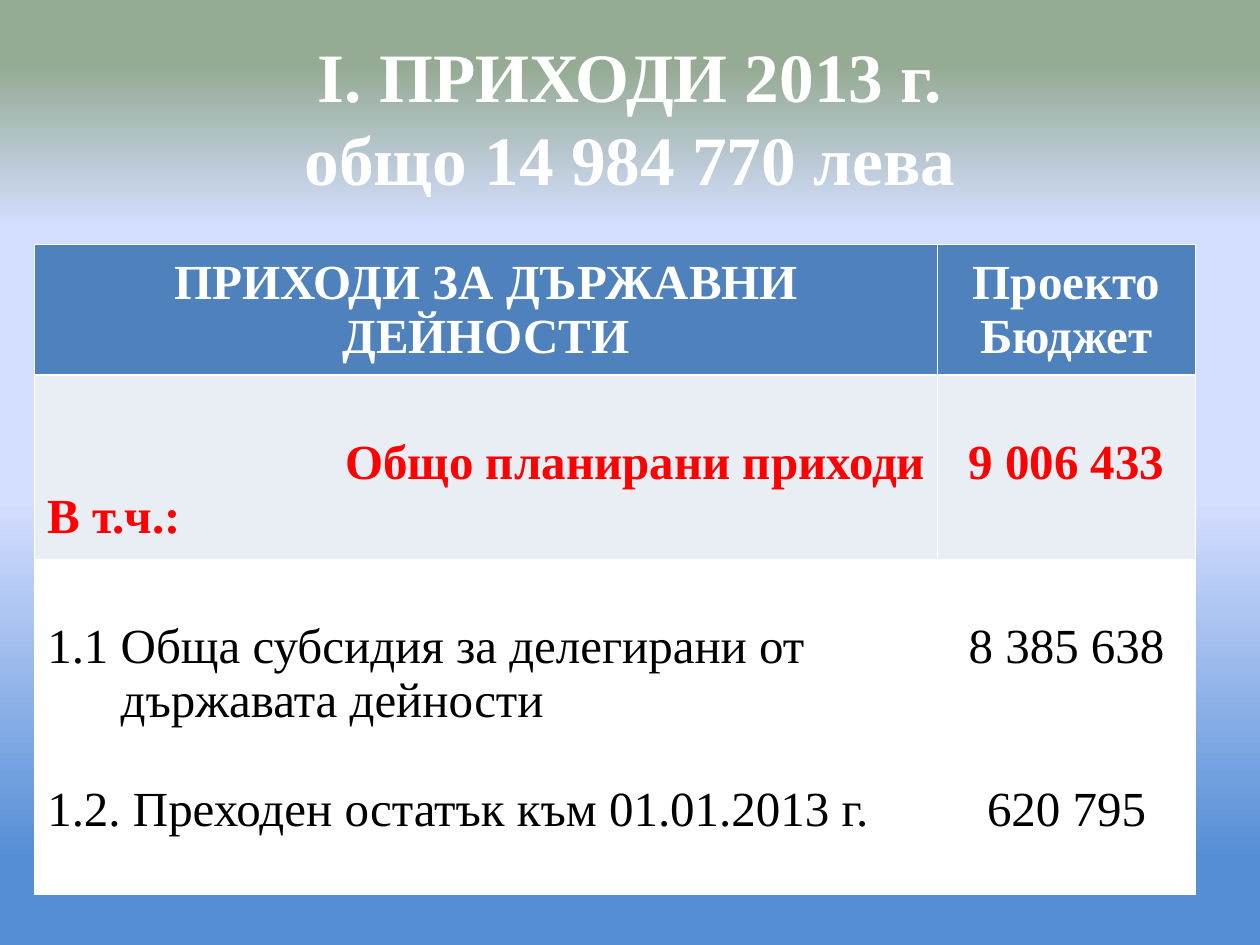
from dataclasses import dataclass
from typing import Optional

from lxml import etree
from pptx import Presentation
from pptx import util as u
from pptx.dml.color import RGBColor
from pptx.enum import text as t
from pptx.oxml.ns import qn

HUES = {"white": "FFFFFF", "blue": "4F81BD", "pale": "E9EDF4",
        "red": "FF0000", "black": "000000"}
STOPS = [(9, "558ED5"), (47, "D4DEFF"), (76, "D4DEFF"), (93, "96AB94")]
FACE = "Times New Roman"
LEFT, MID, RIGHT = t.PP_ALIGN.LEFT, t.PP_ALIGN.CENTER, t.PP_ALIGN.RIGHT
LINE = 31  # height of one table line in points
PAD = 3.6  # cell margin above and below in points


@dataclass
class Para:
    words: str
    align: t.PP_ALIGN = MID
    gap: int = 0  # free lines above
    indent: Optional[u.Length] = None


@dataclass
class Row:
    height: float
    fill: str
    ink: str
    bold: bool
    lead: int  # free lines at the top of each cell
    anchor: t.MSO_ANCHOR
    cells: list[list[Para]]


TOP, CENTRE = t.MSO_ANCHOR.TOP, t.MSO_ANCHOR.MIDDLE
COLS = [18.2, 5.2]
ROWS = [
    Row(2.42, "blue", "white", True, 0, CENTRE, [
        [Para("ПРИХОДИ ЗА ДЪРЖАВНИ ДЕЙНОСТИ")],
        [Para("Проекто"), Para("Бюджет")]]),
    Row(3.53, "pale", "red", True, 1, TOP, [
        [Para("Общо планирани приходи", RIGHT), Para("В т.ч.:", LEFT)],
        [Para("9 006 433")]]),
    Row(6.75, "white", "black", False, 1, TOP, [
        [Para("1.1 Обща субсидия за делегирани от", LEFT),
         Para("държавата дейности", LEFT, indent=u.Cm(1.48)),
         Para("1.2. Преходен остатък към 01.01.2013 г.", LEFT, gap=1)],
        [Para("8 385 638"), Para("620 795", gap=2)]]),
]


def style(font, size: float, ink: str, bold: bool) -> None:
    for key, val in {"name": FACE, "size": u.Pt(size), "bold": bold}.items():
        setattr(font, key, val)
    font.color.rgb = RGBColor.from_string(HUES[ink])


def paint(slide) -> None:
    """Fill the background with the gradient, running from bottom to top."""
    fill = slide.background.fill
    fill.gradient()
    fill.gradient_angle = 90
    stops = slide.background._cSld.find(".//" + qn("a:gsLst"))
    for old in list(stops):
        stops.remove(old)
    for pos, hue in STOPS:
        stop = etree.SubElement(stops, qn("a:gs"), pos=str(pos * 1000))
        etree.SubElement(stop, qn("a:srgbClr"), val=hue)


def edge(cell) -> None:
    """Put a thin white border on all four sides, ahead of the cell fill."""
    props = cell._tc.get_or_add_tcPr()
    for i, side in enumerate(("lnL", "lnR", "lnT", "lnB")):
        line = etree.Element(qn("a:" + side), w=str(u.Pt(1)))
        solid = etree.SubElement(line, qn("a:solidFill"))
        etree.SubElement(solid, qn("a:srgbClr"), val=HUES["white"])
        props.insert(i, line)


def write(cell, row: Row, paras: list[Para]) -> None:
    form = {"vertical_anchor": row.anchor, "margin_bottom": u.Pt(PAD),
            "margin_top": u.Pt(PAD + row.lead * LINE)}
    for key, val in form.items():
        setattr(cell, key, val)
    cell.fill.solid()
    cell.fill.fore_color.rgb = RGBColor.from_string(HUES[row.fill])
    edge(cell)
    frame = cell.text_frame
    for i, para in enumerate(paras):
        p = frame.add_paragraph() if i else frame.paragraphs[0]
        p.alignment = para.align
        if para.gap:
            p.space_before = u.Pt(para.gap * LINE)
        if para.indent:
            p._p.get_or_add_pPr().set("marL", str(para.indent))
        run = p.add_run()
        run.text = para.words
        style(run.font, 28, row.ink, row.bold)


def head(slide) -> None:
    box = slide.shapes.add_textbox(u.Cm(1.27), u.Cm(0.76), u.Cm(22.86), u.Cm(3.18))
    frame = box.text_frame
    frame.word_wrap = True
    frame.vertical_anchor = CENTRE
    p = frame.paragraphs[0]
    p.text = "І. ПРИХОДИ 2013 г.\vобщо 14 984 770 лева"
    p.alignment = MID
    for run in p.runs:
        style(run.font, 39.6, "white", True)


def grid(slide) -> None:
    high = sum(row.height for row in ROWS)
    table = slide.shapes.add_table(len(ROWS), len(COLS), u.Cm(0.7), u.Cm(4.93),
                                   u.Cm(sum(COLS)), u.Cm(high)).table
    for col, wide in zip(table.columns, COLS):
        col.width = u.Cm(wide)
    for i, row in enumerate(ROWS):
        table.rows[i].height = u.Cm(row.height)
        for j, paras in enumerate(row.cells):
            write(table.cell(i, j), row, paras)


def main() -> None:
    deck = Presentation()
    deck.slide_width, deck.slide_height = u.Cm(25.4), u.Cm(19.05)
    slide = deck.slides.add_slide(deck.slide_layouts[6])
    paint(slide)
    head(slide)
    grid(slide)
    deck.save("out.pptx")


if __name__ == "__main__":
    main()
